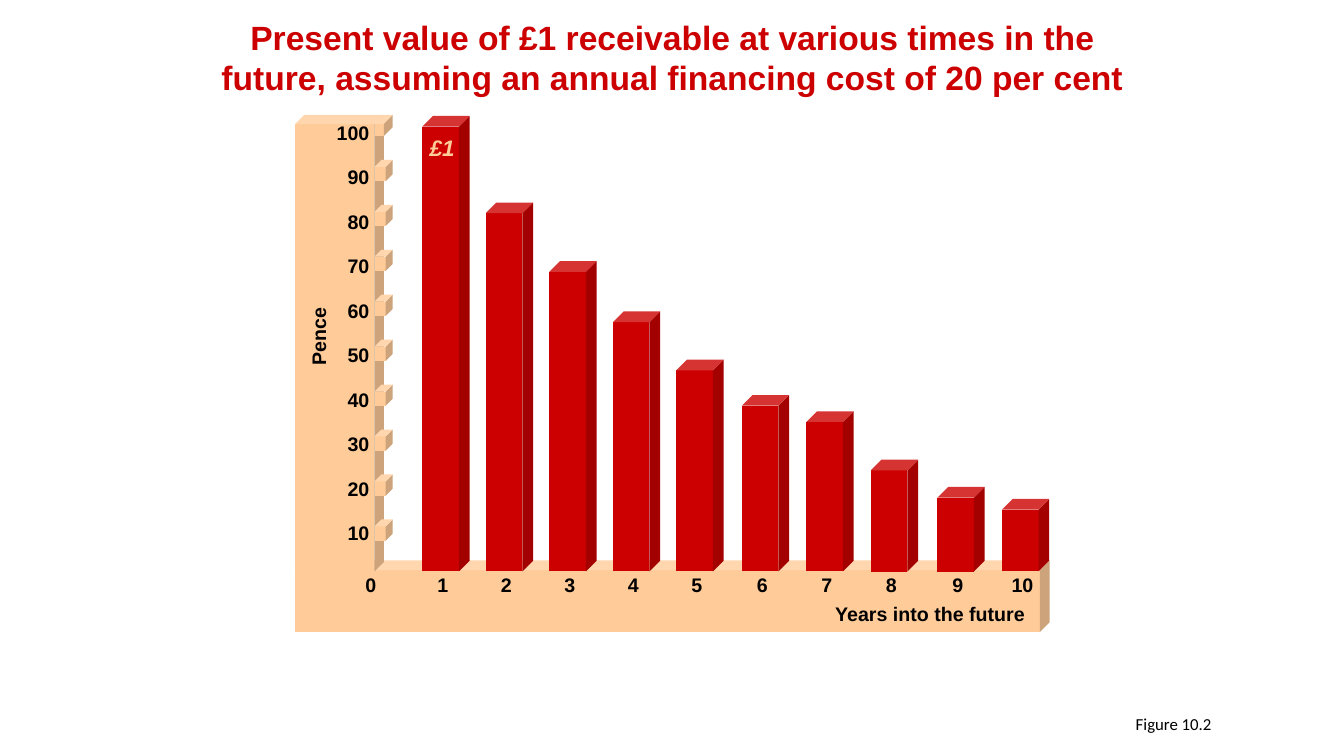
import pptx
import pptx.util
import pptx.dml.color
import pptx.enum.shapes
import pptx.enum.text

Pt = pptx.util.Pt
ALIGN = pptx.enum.text.PP_ALIGN

RED = "CC0000"
PEACH = "FFCC99"
BLACK = "000000"

BAR_BOTTOM = 408.2
BAR_LEFTS_AND_TOPS = [
    (301.7, 82.8), (347, 144.7), (392.4, 186.5), (437.8, 222.5), (483.1, 257),
    (529.9, 282.2), (576, 293.8), (622.1, 328.3), (669.6, 347.8), (715.7, 356.4),
]


def color(hex_string):
    return pptx.dml.color.RGBColor.from_string(hex_string)


def place(box, left, top, width, height):
    box.left, box.top = Pt(left), Pt(top)
    box.width, box.height = Pt(width), Pt(height)


def write(box, words, size, hex_string, align, font="Arial", bold=True, italic=False):
    frame = box.text_frame
    frame.word_wrap = True
    frame.auto_size = pptx.enum.text.MSO_AUTO_SIZE.NONE
    frame.vertical_anchor = pptx.enum.text.MSO_ANCHOR.TOP
    frame.text = words
    paragraph = frame.paragraphs[0]
    paragraph.alignment = align
    paragraph.font.name = font
    paragraph.font.size = Pt(size)
    paragraph.font.bold = bold
    paragraph.font.italic = italic
    paragraph.font.color.rgb = color(hex_string)


def add_label(slide, words, left, top, width, height=24.3, size=14,
              hex_string=BLACK, align=ALIGN.CENTER, **style):
    label = slide.shapes.add_textbox(Pt(left), Pt(top), Pt(width), Pt(height))
    write(label, words, size, hex_string, align, **style)
    return label


def add_cube(slide, left, top, width, height, depth, hex_string):
    cube = slide.shapes.add_shape(
        pptx.enum.shapes.MSO_SHAPE.CUBE, Pt(left), Pt(top), Pt(width), Pt(height))
    cube.adjustments[0] = depth
    cube.shadow.inherit = False
    cube.fill.solid()
    cube.fill.fore_color.rgb = color(hex_string)
    cube.line.fill.background()


def add_years(slide):
    add_cube(slide, 210.4, 400.3, 539.3, 51.1, 0.136, PEACH)
    add_label(slide, "0", 249.1, 406, 31.7)
    for year, (left, top) in enumerate(BAR_LEFTS_AND_TOPS, 1):
        add_cube(slide, left, top, 33.8, BAR_BOTTOM - top, 0.226, RED)
        add_label(slide, str(year), left - 1.2, 405.4, 31.7)
    add_label(slide, "Years into the future", 545, 426.2, 194.4, align=ALIGN.RIGHT)
    add_label(slide, "£1", 295.9, 92.2, 39.6, 26.6, size=16,
              hex_string=PEACH, italic=True)


def add_pence(slide):
    add_cube(slide, 210.7, 82.1, 63.4, 326.1, 0.105, PEACH)
    for step in range(10):
        depth = 0.49 if step == 0 else 0.383
        add_cube(slide, 267.5, 82.1 + 32.1 * step, 13, 15.1, depth, PEACH)
        add_label(slide, str(100 - 10 * step), 226, 82.5 + 31.8 * step, 45,
                  align=ALIGN.RIGHT)
    pence = add_label(slide, "Pence", 192.2, 228.2, 70.6)
    pence.rotation = 270


def main():
    deck = pptx.Presentation()
    deck.slide_width, deck.slide_height = Pt(960), Pt(540)
    slide = deck.slides.add_slide(deck.slide_layouts[5])
    title = slide.shapes.title
    place(title, 139.7, 8.6, 681.1, 65.5)
    write(title, "Present value of £1 receivable at various times in the future, "
          "assuming an annual financing cost of 20 per cent", 24, RED, ALIGN.CENTER)
    add_years(slide)
    add_pence(slide)
    add_label(slide, "Figure 10.2", 804.2, 506.5, 80, 21.6, size=12,
              align=ALIGN.LEFT, font="Calibri", bold=False)
    deck.save("out.pptx")


if __name__ == "__main__":
    main()
